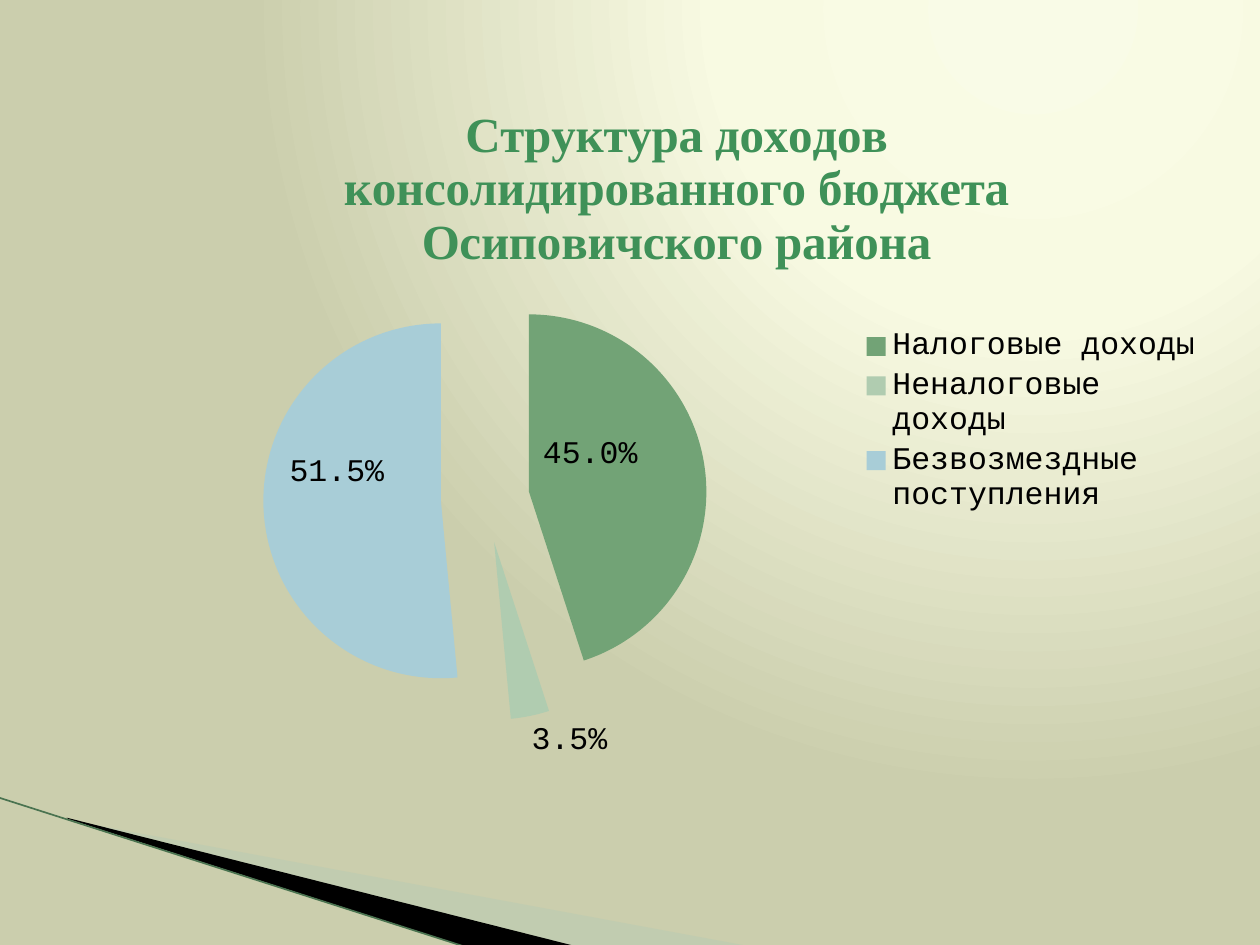
from lxml import etree
from pptx import Presentation
from pptx.chart.data import CategoryChartData
from pptx.dml.color import RGBColor
from pptx.enum.chart import XL_CHART_TYPE, XL_LABEL_POSITION as LabelPos, XL_LEGEND_POSITION
from pptx.enum.shapes import MSO_CONNECTOR
from pptx.oxml import parse_xml
from pptx.oxml.ns import nsdecls, qn
from pptx.util import Inches, Pt

TITLE = "Структура доходов консолидированного бюджета Осиповичского района"
LABEL_FORMAT = "0.0%"
# name, share, colour, label position, label shift as a part of the chart
INCOMES = [
    ("Налоговые доходы", 0.45, "72A376", LabelPos.CENTER, (-0.024, -0.032)),
    ("Неналоговые доходы", 0.035, "B0CCB0", LabelPos.OUTSIDE_END, None),
    ("Безвозмездные поступления", 0.515, "A8CDD7", LabelPos.CENTER, (-0.014, -0.045)),
]
BACKGROUND = [(0, "F9FBE7"), (40, "F8FAE2"), (100, "CBCEAD")]
# points, colour, opacity in percent
WEDGES = [
    ([(0.55, 6.51), (5.95, 7.51), (4.56, 7.51), (0.55, 6.5)], "B3CBB5", 40),
    ([(0.53, 6.49), (4.57, 7.51), (3.72, 7.52), (0.54, 6.5)], "000000", 100),
]
EDGE = [(-0.01, 6.33), (3.71, 7.52)]


def rgb(code):
    return RGBColor.from_string(code)


def style(font, size, color, name, bold=False):
    font.size, font.name, font.bold = Pt(size), name, bold
    font.color.rgb = rgb(color)


def paint_background(slide):
    stops = "".join(f'<a:gs pos="{pos * 1000}"><a:srgbClr val="{color}"/></a:gs>'
                    for pos, color in BACKGROUND)
    slide.element.cSld.insert(0, parse_xml(
        f'<p:bg {nsdecls("p", "a")}><p:bgPr><a:gradFill><a:gsLst>{stops}</a:gsLst>'
        '<a:path path="circle"><a:fillToRect l="65000" t="0" r="0" b="98000"/></a:path>'
        '</a:gradFill><a:effectLst/></p:bgPr></p:bg>'))


def add_wedge(slide, points, color, opacity):
    corners = [(Inches(x), Inches(y)) for x, y in points]
    builder = slide.shapes.build_freeform(*corners[0], scale=1.0)
    builder.add_line_segments(corners[1:], close=True)
    wedge = builder.convert_to_shape()
    wedge.shadow.inherit = False
    wedge.fill.solid()
    wedge.fill.fore_color.rgb = rgb(color)
    wedge.line.fill.background()
    if opacity < 100:
        tint = wedge.fill._xPr.find(".//" + qn("a:srgbClr"))
        etree.SubElement(tint, qn("a:alpha"), val=str(opacity * 1000))


def layout(x, y, w=None, h=None, inner=False, edge=True):
    """Manual chart layout, in parts of the chart's width and height."""
    fields = [("layoutTarget", "inner")] if inner else []
    if edge:
        fields += [("xMode", "edge"), ("yMode", "edge")]
    fields += [("x", x), ("y", y)]
    if w:
        fields += [("w", w), ("h", h)]
    body = "".join(f'<c:{tag} val="{value}"/>' for tag, value in fields)
    return parse_xml(f'<c:layout {nsdecls("c")}><c:manualLayout>{body}'
                     '</c:manualLayout></c:layout>')


def place(element, new_layout, after=None):
    """Swap in a layout, following the named child or coming first."""
    for old in element.findall(qn("c:layout")):
        element.remove(old)
    if after is None:
        element.insert(0, new_layout)
    else:
        element.find(qn(after)).addnext(new_layout)


def add_income_pie(slide):
    data = CategoryChartData(number_format=LABEL_FORMAT)
    data.categories = [income[0] for income in INCOMES]
    data.add_series(TITLE, [income[1] for income in INCOMES])
    chart = slide.shapes.add_chart(
        XL_CHART_TYPE.PIE, Inches(0.91), Inches(0.52), Inches(8.74), Inches(5.67), data).chart
    style(chart.font, 18, "000000", "Courier New")

    chart.has_title = True
    chart.chart_title.text_frame.text = TITLE
    style(chart.chart_title.text_frame.paragraphs[0].runs[0].font,
          28, "3F9158", "Times New Roman", True)
    place(chart.chart_title._element, layout(0.2, 0.04), "c:tx")

    chart.has_legend = True
    chart.legend.position = XL_LEGEND_POSITION.RIGHT
    chart.legend.include_in_layout = False
    place(chart.legend._element, layout(0.677, 0.363, 0.31, 0.27), "c:legendPos")

    plot = chart.plots[0]
    plot.vary_by_categories = True
    place(plot._element.getparent(), layout(0.135, 0.296, 0.403, 0.621, inner=True))
    series = plot.series[0]
    labels = series.data_labels
    labels.show_value = True
    labels.show_percentage = False
    labels.number_format, labels.number_format_is_linked = LABEL_FORMAT, False
    labels.position = LabelPos.OUTSIDE_END
    for index, (_, _, color, position, shift) in enumerate(INCOMES):
        point = series.points[index]
        point.format.fill.solid()
        point.format.fill.fore_color.rgb = rgb(color)
        point.format.line.fill.background()
        label = point.data_label
        style(label.font, 18, "000000", "Courier New")
        label.position = position
        entry = labels._element.findall(qn("c:dLbl"))[index]
        entry.find(qn("c:idx")).addnext(parse_xml(
            f'<c:numFmt {nsdecls("c")} formatCode="{LABEL_FORMAT}" sourceLinked="0"/>'))
        if shift:
            place(entry, layout(*shift, edge=False), "c:idx")
    first_point = series._element.find(qn("c:dPt"))
    first_point.addprevious(parse_xml(f'<c:explosion {nsdecls("c")} val="25"/>'))


def main():
    prs = Presentation()
    prs.slide_width, prs.slide_height = Inches(10), Inches(7.5)
    slide = prs.slides.add_slide(prs.slide_layouts[6])
    paint_background(slide)
    for wedge in WEDGES:
        add_wedge(slide, *wedge)
    ends = [Inches(value) for point in EDGE for value in point]
    edge = slide.shapes.add_connector(MSO_CONNECTOR.STRAIGHT, *ends)
    edge.line.color.rgb = rgb("4A7350")
    edge.line.width = Pt(0.95)
    etree.SubElement(edge._element.spPr, qn("a:effectLst"))
    add_income_pie(slide)
    prs.save("out.pptx")


if __name__ == "__main__":
    main()
